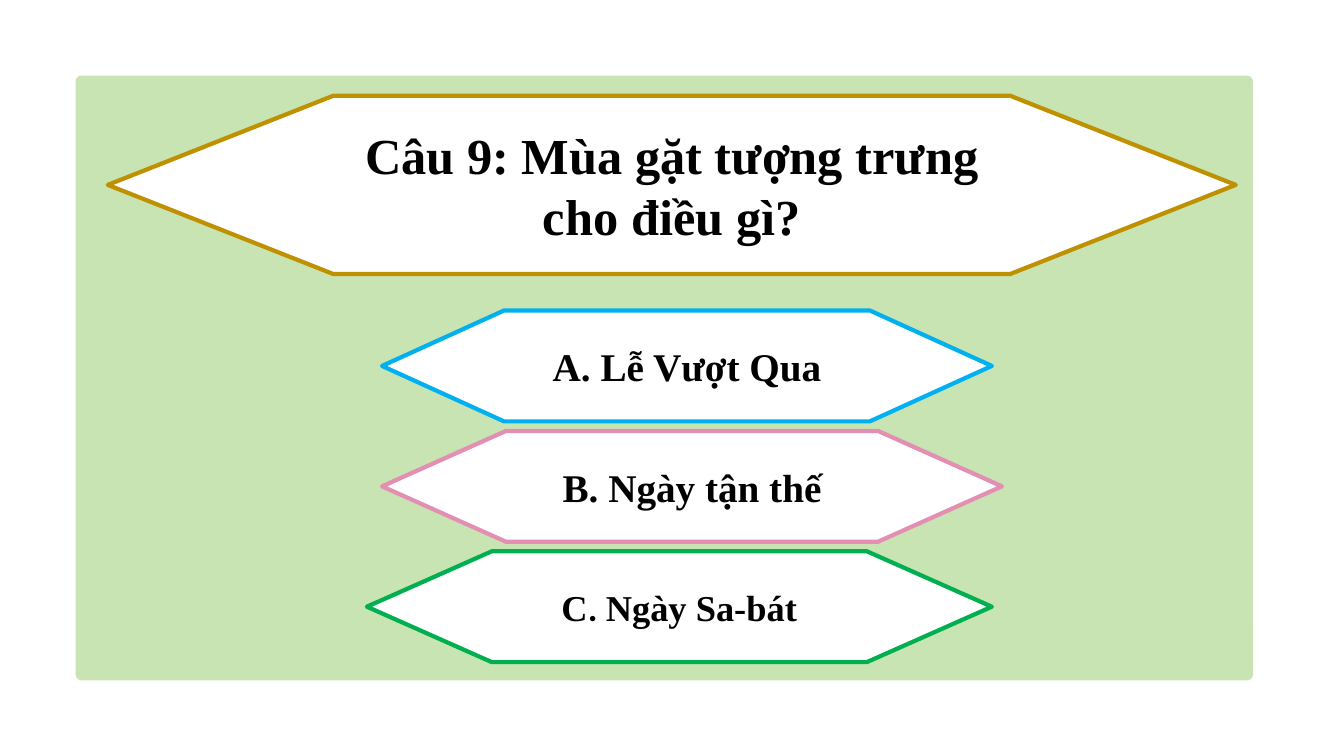
import pptx
import pptx.util
import pptx.dml.color
import pptx.enum.shapes
import pptx.enum.text

Pt = pptx.util.Pt
SHAPE = pptx.enum.shapes.MSO_SHAPE

COLORS = {
    "panel": "C8E4B2", "white": "FFFFFF", "black": "000000",
    "gold": "BF9000", "blue": "00B0F0", "pink": "E28FB3", "green": "00B050",
}
SERIF, SANS = "Times New Roman", "Calibri"
QUESTION = [("Câu 9: Mùa gặt tượng trưng cho điều gì?", SERIF)]
ANSWERS = [
    {"left": 272.9, "width": 435.6, "line": "blue", "size": 28,
     "runs": [("A. Lễ Vượt Qua", SERIF)]},
    {"left": 272.9, "width": 442.8, "line": "pink", "size": 28,
     "runs": [("B. Ngày tận thế", SERIF)]},
    {"left": 262.1, "width": 446.4, "line": "green", "size": 26,
     "runs": [("C", SERIF), (". ", SANS), ("Ngày Sa-bát", SERIF)]},
]
ANSWER_TOP, ANSWER_PITCH, ANSWER_HEIGHT = 221.8, 86, 79.2


def rgb(name):
    return pptx.dml.color.RGBColor.from_string(COLORS[name])


def set_all(obj, values):
    for name, value in values.items():
        setattr(obj, name, value)


def add_filled(s, kind, box, fill):
    sp = s.shapes.add_shape(kind, *map(Pt, box))
    sp.shadow.inherit = False
    sp.fill.solid()
    sp.fill.fore_color.rgb = rgb(fill)
    return sp


def add_hexagon(s, box, line, size, runs):
    sp = add_filled(s, SHAPE.FLOWCHART_PREPARATION, box, "white")
    sp.line.color.rgb = rgb(line)
    sp.line.width = Pt(3)
    tf = sp.text_frame
    set_all(tf, {"word_wrap": True,
                 "vertical_anchor": pptx.enum.text.MSO_ANCHOR.MIDDLE})
    p = tf.paragraphs[0]
    p.alignment = pptx.enum.text.PP_ALIGN.CENTER
    for text, font in runs:
        r = p.add_run()
        r.text = text
        set_all(r.font, {"name": font, "size": Pt(size), "bold": True})
        r.font.color.rgb = rgb("black")


def main():
    prs = pptx.Presentation()
    set_all(prs, {"slide_width": Pt(960), "slide_height": Pt(540)})
    s = prs.slides.add_slide(prs.slide_layouts[6])

    panel = add_filled(s, SHAPE.ROUNDED_RECTANGLE, (54, 54, 841, 432), "panel")
    panel.adjustments[0] = 0.01
    panel.line.fill.background()

    add_hexagon(s, (77, 68.4, 805.7, 127.4), "gold", 36, QUESTION)
    for i, a in enumerate(ANSWERS):
        box = (a["left"], ANSWER_TOP + i * ANSWER_PITCH, a["width"], ANSWER_HEIGHT)
        add_hexagon(s, box, a["line"], a["size"], a["runs"])

    prs.save("out.pptx")


if __name__ == "__main__":
    main()
